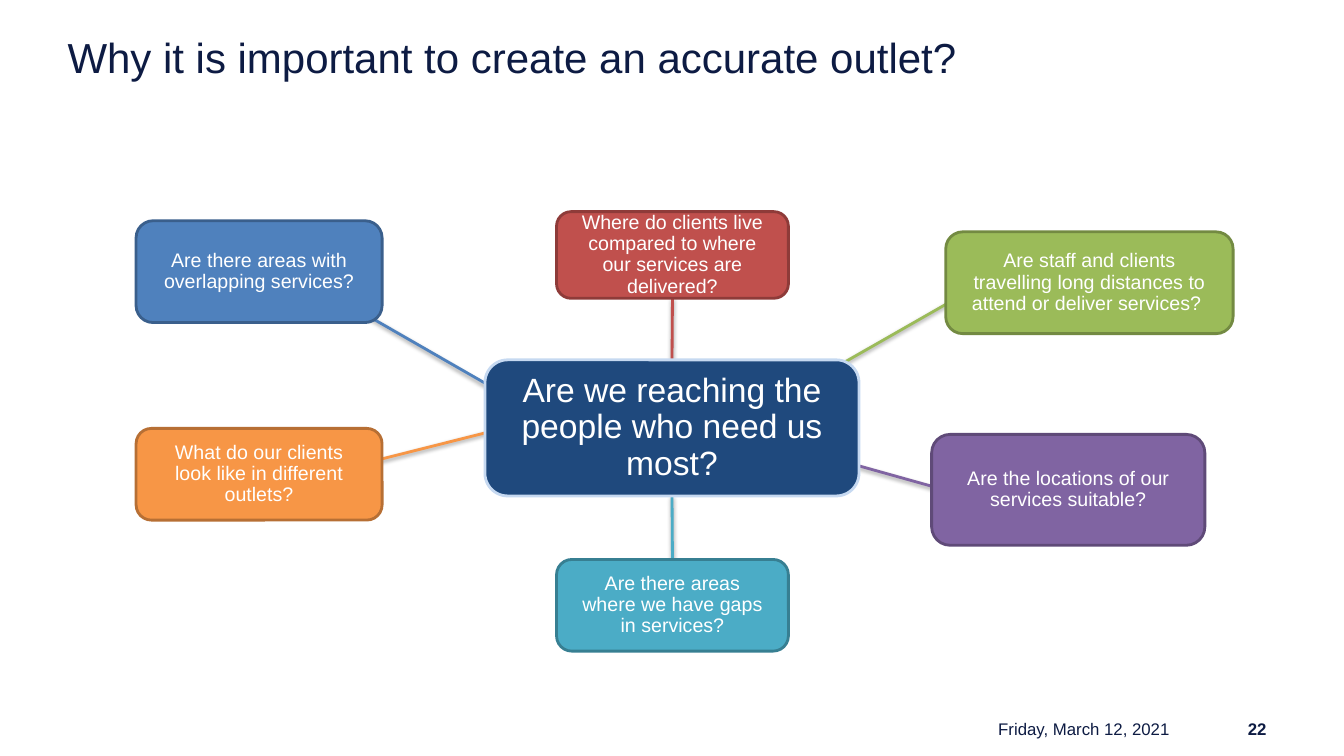
from lxml import etree
from pptx import Presentation
from pptx.dml.color import RGBColor
from pptx.enum import shapes, text
from pptx.oxml import ns
from pptx.util import Inches, Pt

COLORS = {
    "ink": "0D1B43", "white": "FFFFFF",
    "navy": "1F497D", "navy edge": "C6D9F1",
    "red": "C0504D", "red edge": "8E3B39",
    "blue": "4F81BD", "blue edge": "3A5F8C",
    "orange": "F79646", "orange edge": "B76F34",
    "teal": "4BACC6", "teal edge": "377F92",
    "green": "9BBB59", "green edge": "738A42",
    "purple": "8064A2", "purple edge": "5F4A78",
}
TOP, BOTTOM = 0, 2

# Color, box (left, top, width, height), line (from, to), wording
TOPICS = [
    ("orange", (1.35, 4.25, 2.44, 0.91), (4.99, 4.25, 3.56, 4.61),
     "What do our clients look like in different outlets?"),
    ("blue", (1.35, 2.19, 2.44, 1.01), (4.93, 3.87, 3.45, 3.02),
     "Are there areas with overlapping services?"),
    ("red", (5.52, 2.1, 2.3, 0.86), (6.67, 3.57, 6.67, 2.96),
     "Where do clients live compared to where our services are delivered?"),
    ("purple", (9.24, 4.31, 2.71, 1.1), (9.37, 4.86, 8.12, 4.51),
     "Are the locations of our services suitable?"),
    ("green", (9.38, 2.3, 2.85, 1.01), (8.12, 3.74, 9.45, 2.98),
     "Are staff and clients travelling long distances to attend or deliver services? "),
    ("teal", (5.52, 5.55, 2.3, 0.91), (6.67, 4.92, 6.67, 5.55),
     "Are there areas where we have gaps in services?"),
]
# Sides joined by the vertical lines: (side of hub, side of topic)
JOINS = {"red": (TOP, BOTTOM), "teal": (BOTTOM, TOP)}


class Deck:
    font = "Arial"
    line = Pt(2)

    def __init__(self):
        self.prs = Presentation()
        self.prs.slide_width = Inches(13.33)
        self.prs.slide_height = Inches(7.5)
        self.slide = self.prs.slides.add_slide(self.prs.slide_layouts[6])

    def color(self, name):
        return RGBColor.from_string(COLORS[name])

    def fill_text(self, shape, words, size, color, align, anchor, pad, bold=False):
        frame = shape.text_frame
        frame.text = words
        frame.word_wrap = True
        frame.vertical_anchor = anchor
        frame.margin_left = frame.margin_right = Inches(pad)
        frame.margin_top = frame.margin_bottom = 0
        para = frame.paragraphs[0]
        para.alignment = align
        font = para.runs[0].font
        font.name, font.size, font.bold = self.font, Pt(size), bold
        font.color.rgb = self.color(color)
        return para

    def label(self, area, words, size, align=text.PP_ALIGN.RIGHT,
              anchor=text.MSO_ANCHOR.MIDDLE, pad=0.1, bold=False):
        box = self.slide.shapes.add_textbox(*map(Inches, area))
        self.fill_text(box, words, size, "ink", align, anchor, pad, bold)

    def box(self, color, area, words, size=14, pad=0.15):
        box = self.slide.shapes.add_shape(
            shapes.MSO_SHAPE.ROUNDED_RECTANGLE, *map(Inches, area))
        box.shadow.inherit = False
        box.fill.solid()
        box.fill.fore_color.rgb = self.color(color)
        box.line.color.rgb = self.color(color + " edge")
        box.line.width = self.line
        para = self.fill_text(box, words, size, "white", text.PP_ALIGN.CENTER,
                              text.MSO_ANCHOR.MIDDLE, pad)
        para.line_spacing = 0.9
        return box

    def link(self, color, ends):
        link = self.slide.shapes.add_connector(
            shapes.MSO_CONNECTOR.STRAIGHT, *map(Inches, ends))
        link.line.color.rgb = self.color(color)
        link.line.width = self.line
        # Soft shadow straight below the line
        effects = etree.SubElement(link._element.spPr, ns.qn("a:effectLst"))
        shade = etree.SubElement(
            effects, ns.qn("a:outerShdw"), blurRad=str(Pt(3.1)),
            dist=str(Pt(1.6)), dir="5400000", rotWithShape="0")
        black = etree.SubElement(shade, ns.qn("a:srgbClr"), val="000000")
        etree.SubElement(black, ns.qn("a:alpha"), val="38000")
        return link


def main():
    deck = Deck()

    # Title and footer
    deck.label((0.67, 0.31, 12, 0.66),
               "Why it is important to create an accurate outlet?", 30,
               text.PP_ALIGN.LEFT, text.MSO_ANCHOR.TOP, 0)
    deck.label((11.57, 7.12, 1.09, 0.23), "22", 12, bold=True)
    deck.label((8.59, 7.12, 3.11, 0.23), "Friday, March 12, 2021", 12)

    # Lines lie behind the boxes
    links = {color: deck.link(color, ends) for color, _, ends, _ in TOPICS}

    # Topics around the hub
    boxes = {color: deck.box(color, area, words)
             for color, area, _, words in TOPICS}
    hub = deck.box("navy", (4.81, 3.57, 3.71, 1.35),
                   "Are we reaching the people who need us most?", 24, 0.25)

    # Join the vertical lines to the boxes
    for color, (start, end) in JOINS.items():
        links[color].begin_connect(hub, start)
        links[color].end_connect(boxes[color], end)

    deck.prs.save("out.pptx")


if __name__ == "__main__":
    main()
